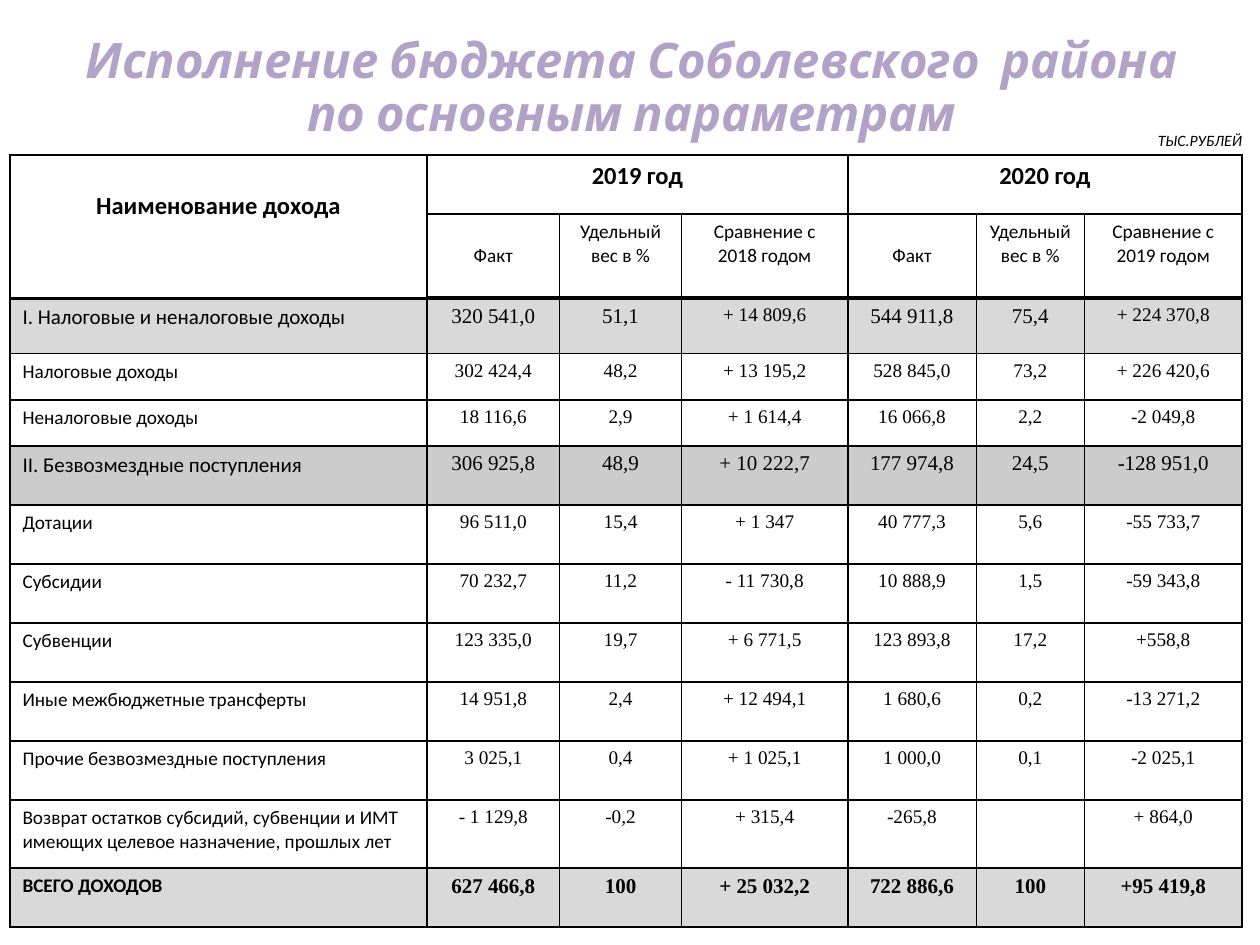
"""Build the slide with the district budget income table for 2019 and 2020."""
import lxml.etree
import pptx
import pptx.dml.color
import pptx.enum.text
import pptx.oxml.ns
import pptx.util

Cm = pptx.util.Cm
Pt = pptx.util.Pt
ALIGN = pptx.enum.text.PP_ALIGN
qn = pptx.oxml.ns.qn
BLACK = pptx.dml.color.RGBColor(0x00, 0x00, 0x00)
GREY = pptx.dml.color.RGBColor(0xD9, 0xD9, 0xD9)
LILAC = pptx.dml.color.RGBColor(0xB3, 0xA2, 0xC7)

COLUMN_WIDTHS = [8.41, 2.67, 2.46, 3.35, 2.59, 2.18, 3.18]
ROW_HEIGHTS = [1.19, 1.7, 1.12, 0.93, 0.93] + [1.19] * 6 + [1.37, 1.19]
ROWS = [
    ["Наименование дохода", "2019 год", "", "", "2020 год", "", ""],
    ["", "Факт", "Удельный вес в %", "Сравнение с 2018 годом",
     "Факт", "Удельный вес в %", "Сравнение с 2019 годом"],
    ["I. Налоговые и неналоговые доходы", "320 541,0", "51,1", "+ 14 809,6",
     "544 911,8", "75,4", "+ 224 370,8"],
    ["Налоговые доходы", "302 424,4", "48,2", "+ 13 195,2",
     "528 845,0", "73,2", "+ 226 420,6"],
    ["Неналоговые доходы", "18 116,6", "2,9", "+ 1 614,4", "16 066,8", "2,2", "-2 049,8"],
    ["II. Безвозмездные поступления", "306 925,8", "48,9", "+ 10 222,7",
     "177 974,8", "24,5", "-128 951,0"],
    ["Дотации", "96 511,0", "15,4", "+ 1 347", "40 777,3", "5,6", "-55 733,7"],
    ["Субсидии", "70 232,7", "11,2", "- 11 730,8", "10 888,9", "1,5", "-59 343,8"],
    ["Субвенции", "123 335,0", "19,7", "+ 6 771,5", "123 893,8", "17,2", "+558,8"],
    ["Иные межбюджетные трансферты", "14 951,8", "2,4", "+ 12 494,1",
     "1 680,6", "0,2", "-13 271,2"],
    ["Прочие безвозмездные поступления", "3 025,1", "0,4", "+ 1 025,1",
     "1 000,0", "0,1", "-2 025,1"],
    ["Возврат остатков субсидий, субвенции и ИМТ имеющих целевое назначение, прошлых лет",
     "- 1 129,8", "-0,2", "+ 315,4", "-265,8", "", "+ 864,0"],
    ["ВСЕГО ДОХОДОВ", "627 466,8", "100", "+ 25 032,2", "722 886,6", "100", "+95 419,8"],
]
TAXES, GRANTS, TOTAL = 2, 5, 12


def style_span(span, size, font, color=BLACK, bold=False, italic=False):
    span.font.size = Pt(size)
    span.font.name = font
    span.font.color.rgb = color
    span.font.bold = bold
    span.font.italic = italic


def add_border(cell, side, width):
    line = lxml.etree.SubElement(cell._tc.get_or_add_tcPr(), qn("a:ln" + side), w=str(Pt(width)))
    fill = lxml.etree.SubElement(line, qn("a:solidFill"))
    lxml.etree.SubElement(fill, qn("a:srgbClr"), val=str(BLACK))


deck = pptx.Presentation()
deck.slide_width = Cm(25.4)
deck.slide_height = Cm(19.05)
page = deck.slides.add_slide(deck.slide_layouts[6])

frame = page.shapes.add_table(len(ROWS), len(COLUMN_WIDTHS), Cm(0.2), Cm(3.12),
                              Cm(sum(COLUMN_WIDTHS)), Cm(sum(ROW_HEIGHTS)))
table = frame.table
table.first_row = False
table.horz_banding = False
for column, width in zip(table.columns, COLUMN_WIDTHS):
    column.width = Cm(width)
for row, height in zip(table.rows, ROW_HEIGHTS):
    row.height = Cm(height)
table.cell(0, 0).merge(table.cell(1, 0))
table.cell(0, 1).merge(table.cell(0, 3))
table.cell(0, 4).merge(table.cell(0, 6))

for r, texts in enumerate(ROWS):
    for c, text in enumerate(texts):
        cell = table.cell(r, c)
        heading = r < 2
        if heading:
            bottom = 2 if c == 0 else 2.25 if r == 1 else 1
        else:
            bottom = 1.5 if r == TOTAL else 1
        add_border(cell, "L", 1.5 if heading and c == 1 else 1)
        add_border(cell, "R", 1.5 if c == 6 or heading and c == 0 else 1)
        add_border(cell, "T", 2.25 if r == TAXES and c > 0 else 1)
        add_border(cell, "B", bottom)

        if r in (TAXES, TOTAL):
            cell.fill.solid()
            cell.fill.fore_color.rgb = GREY
        elif r == GRANTS:
            cell.fill.solid()
            cell.fill.fore_color.rgb = BLACK
            shade = cell._tc.tcPr.find(".//" + qn("a:solidFill") + "[last()]")
            shade = cell._tc.tcPr.findall(qn("a:solidFill"))[-1][0]
            lxml.etree.SubElement(shade, qn("a:alpha"), val="20000")
        else:
            cell.fill.background()
        if not text:
            continue

        if r == 0:
            size = 14
        elif r == TAXES:
            size = 11 if c in (3, 6) else 12
        elif r == GRANTS or r == TOTAL and c > 0:
            size = 12
        else:
            size = 11
        if r == 0 and c == 0:
            cell.margin_top = Cm(0.73)
        elif text == "Факт":
            cell.margin_top = Cm(0.6)
        para = cell.text_frame.paragraphs[0]
        para.text = text
        para.alignment = ALIGN.CENTER if heading or c > 0 else ALIGN.LEFT
        font = "Calibri" if heading or c == 0 else "Times New Roman"
        style_span(para.runs[0], size, font, bold=r in (0, TOTAL))

unit_box = page.shapes.add_textbox(Cm(23.09), Cm(2.51), Cm(2.21), Cm(0.64))
unit_box.text_frame.word_wrap = False
unit_box.text_frame.auto_size = pptx.enum.text.MSO_AUTO_SIZE.SHAPE_TO_FIT_TEXT
unit_box.text_frame.text = "ТЫС.РУБЛЕЙ"
style_span(unit_box.text_frame.paragraphs[0].runs[0], 9, "Calibri", italic=True)

title_box = page.shapes.add_textbox(Cm(0.41), Cm(0.41), Cm(24.99), Cm(2.77))
title_box.text_frame.word_wrap = True
title_box.text_frame.vertical_anchor = pptx.enum.text.MSO_ANCHOR.MIDDLE
title_box.text_frame.margin_right = Cm(0.6)
title_box.text_frame.text = "Исполнение бюджета Соболевского  района\nпо основным параметрам"
for para in title_box.text_frame.paragraphs:
    para.alignment = ALIGN.CENTER
    para.line_spacing = 0.9
    style_span(para.runs[0], 28, "Cabin", LILAC, bold=True, italic=True)

deck.save("out.pptx")
